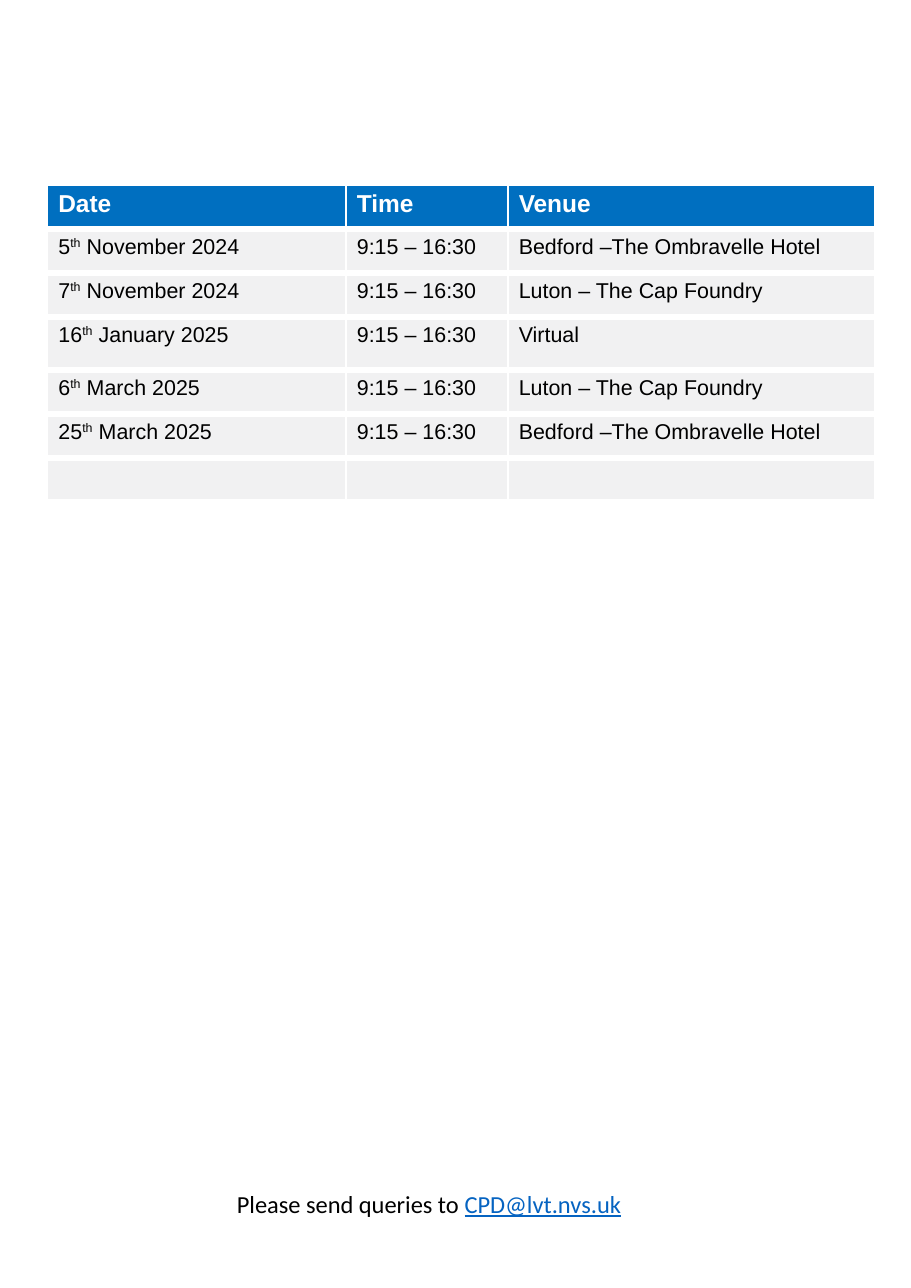
from lxml.etree import SubElement
from pptx import Presentation
from pptx.dml.color import RGBColor as RGB
from pptx.enum.text import PP_ALIGN as ALIGN
from pptx.oxml.ns import qn
from pptx.util import Inches, Pt

COLORS = {"white": "FFFFFF", "header": "006FC0", "row": "F1F1F2",
          "text": "000000", "link": "0563C1"}
HEADER = {"name": "Arial", "size": Pt(16), "bold": True}
BODY = {"name": "Arial", "size": Pt(14), "bold": False}
QUERY = {"name": "Calibri", "size": Pt(16)}
LINK = {**QUERY, "underline": True}

TIME = "9:15 – 16:30"
BEDFORD = "Bedford –The Ombravelle Hotel"
LUTON = "Luton – The Cap Foundry"
SESSIONS = [
    ("5", "November 2024", BEDFORD),
    ("7", "November 2024", LUTON),
    ("16", "January 2025", "Virtual"),
    ("6", "March 2025", LUTON),
    ("25", "March 2025", BEDFORD),
]
COL_WIDTHS = [2.71, 1.47, 3.33]
ROW_HEIGHTS = [0.4, 0.4, 0.4, 0.48, 0.4, 0.4, 0.4]


class Deck:
    def __init__(self, prs):
        self.colors = COLORS
        self.s = prs.slides.add_slide(prs.slide_layouts[6])

    def run(self, p, text, style, color, baseline=None):
        r = p.add_run()
        r.text = text
        for key, value in style.items():
            setattr(r.font, key, value)
        r.font.color.rgb = RGB.from_string(self.colors[color])
        if baseline:
            r._r.get_or_add_rPr().set("baseline", baseline)

    def borders(self, cell, widths):
        tcPr = cell._tc.get_or_add_tcPr()
        for side, width in widths.items():
            ln = SubElement(tcPr, qn(f"a:ln{side}"), w=str(Pt(width)))
            fill = SubElement(ln, qn("a:solidFill"))
            SubElement(fill, qn("a:srgbClr"), val=self.colors["white"])

    def cell(self, cell, runs, style, fill, color, top):
        margins = {"margin_left": 0.1, "margin_top": 0.05,
                   "margin_right": 0, "margin_bottom": 0}
        for key, value in margins.items():
            setattr(cell, key, Inches(value))
        self.borders(cell, {"L": 1.5, "R": 1.5, "T": top, "B": 4.5})
        cell.fill.solid()
        cell.fill.fore_color.rgb = RGB.from_string(self.colors[fill])
        p = cell.text_frame.paragraphs[0]
        for text, baseline in runs:
            self.run(p, text, style, color, baseline)

    def table(self, x, y, rows):
        table = self.s.shapes.add_table(
            len(rows), len(COL_WIDTHS), Inches(x), Inches(y),
            Inches(sum(COL_WIDTHS)), Inches(sum(ROW_HEIGHTS))).table
        table.horz_banding = False
        for col, width in zip(table.columns, COL_WIDTHS):
            col.width = Inches(width)
        for i, (row, height) in enumerate(zip(rows, ROW_HEIGHTS)):
            table.rows[i].height = Inches(height)
            look = (BODY, "row", "text", 4.5) if i else (HEADER, "header", "white", 1.5)
            for j, runs in enumerate(row):
                self.cell(table.cell(i, j), runs, *look)

    def text(self, x, y, w, h, runs):
        sp = self.s.shapes.add_textbox(Inches(x), Inches(y), Inches(w), Inches(h))
        tf = sp.text_frame
        tf.word_wrap = True
        p = tf.paragraphs[0]
        p.alignment = ALIGN.CENTER
        for text, style, color in runs:
            self.run(p, text, style, color)


def main():
    prs = Presentation()
    prs.slide_width, prs.slide_height = Inches(8.27), Inches(11.69)
    deck = Deck(prs)
    rows = [[[(title, None)] for title in ("Date", "Time", "Venue")]]
    for day, month, venue in SESSIONS:
        date = [(day, None), ("th", "30000"), (f" {month}", None)]
        rows.append([date, [(TIME, None)], [(venue, None)]])
    rows.append([[], [], []])
    deck.table(0.43, 1.68, rows)
    deck.text(0.38, 10.74, 7.03, 0.37, [
        ("Please send queries to ", QUERY, "text"),
        ("CPD@lvt.nvs.uk", LINK, "link"),
    ])
    prs.save("out.pptx")


if __name__ == "__main__":
    main()
